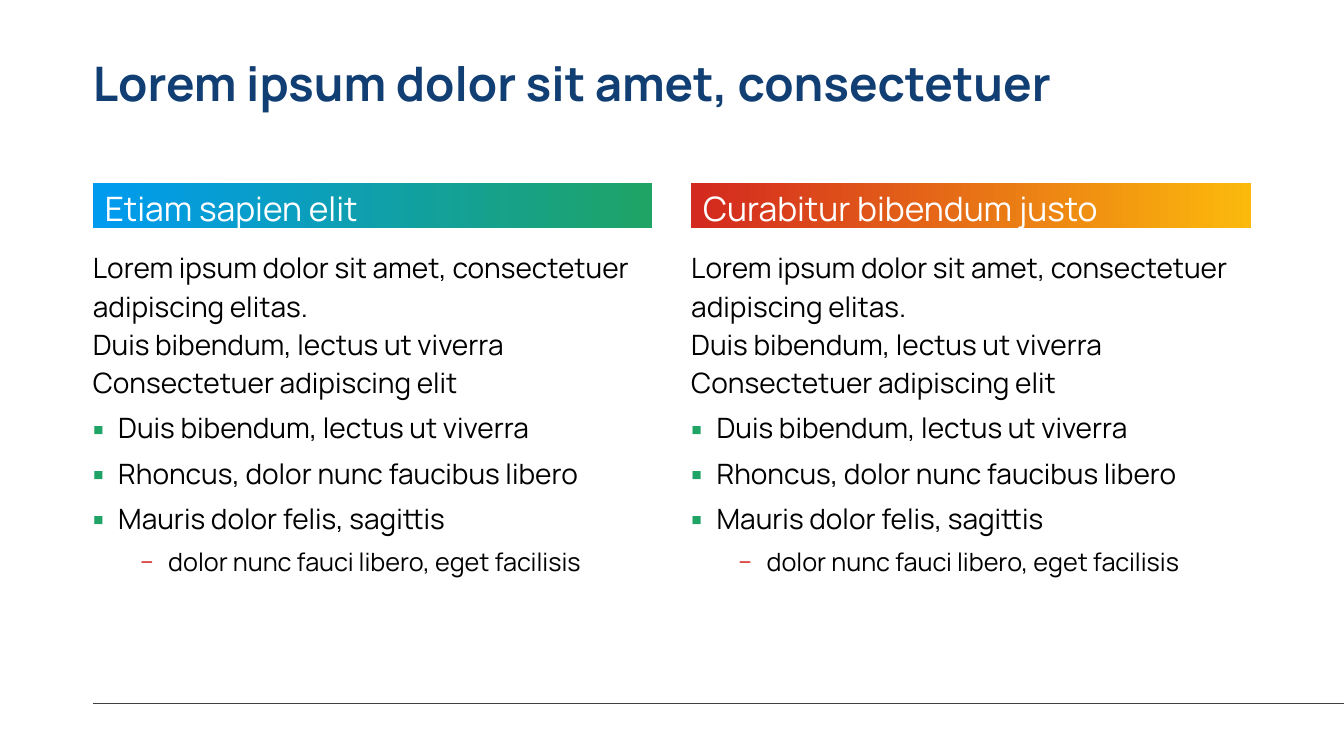
from dataclasses import dataclass

from lxml.etree import SubElement
from pptx import Presentation
from pptx.dml.color import RGBColor
from pptx.enum.shapes import MSO_CONNECTOR
from pptx.enum.text import MSO_ANCHOR, MSO_AUTO_SIZE, PP_ALIGN
from pptx.oxml.ns import qn
from pptx.shapes.base import BaseShape
from pptx.slide import Slide
from pptx.text.text import TextFrame, _Paragraph
from pptx.util import Cm, Pt

FONT = "Manrope"
LEFT = 2.34
COLUMN_WIDTH = 14.1
COLUMN_STEP = 15.08


@dataclass(frozen=True)
class TextStyle:
    size: float
    color: str = "000000"
    bold: bool = False
    line_spacing: float = 1.14
    space_after: float = 0
    level: int = 0
    margin: float = 0
    hanging: float = 0
    bullet: str = ""
    bullet_color: str = ""


@dataclass(frozen=True)
class Column:
    heading: str
    heading_index: int
    body_index: int
    start_position: float
    start_color: str
    end_color: str


TITLE = TextStyle(34, "113E73", bold=True, line_spacing=0.9)
HEADING = TextStyle(24, "FFFFFF")
PLAIN = TextStyle(20, space_after=5)
ITEM = TextStyle(20, space_after=5, margin=0.64, hanging=0.64,
                 bullet="▪", bullet_color="1FA465")
SUBITEM = TextStyle(18, space_after=3, level=1, margin=1.9, hanging=0.71,
                    bullet="–", bullet_color="D3291F")

COLUMNS = [
    Column("Etiam sapien elit", 1, 2, 0.02, "009BEE", "1FA465"),
    Column("Curabitur bibendum justo", 3, 4, 0.01, "D3291F", "FCBA0C"),
]
BODY = [
    ("Lorem ipsum dolor sit amet, consectetuer adipiscing elitas. \n"
     "Duis bibendum, lectus ut viverra Consectetuer adipiscing elit", PLAIN),
    ("Duis bibendum, lectus ut viverra", ITEM),
    ("Rhoncus, dolor nunc faucibus libero", ITEM),
    ("Mauris dolor felis, sagittis", ITEM),
    ("dolor nunc fauci libero, eget facilisis", SUBITEM),
]


def color(value: str) -> RGBColor:
    return RGBColor.from_string(value)


def place(box: BaseShape, left: float, top: float, width: float, height: float) -> None:
    box.left, box.top, box.width, box.height = map(Cm, (left, top, width, height))


def prepare_frame(frame: TextFrame, anchor: MSO_ANCHOR, inset: float = 0) -> None:
    frame.word_wrap = True
    frame.auto_size = MSO_AUTO_SIZE.NONE
    frame.vertical_anchor = anchor
    frame.margin_left = Cm(inset)
    frame.margin_top = frame.margin_right = frame.margin_bottom = 0


def write_paragraph(para: _Paragraph, text: str, style: TextStyle) -> None:
    para.alignment = PP_ALIGN.LEFT
    para.level = style.level
    para.line_spacing = style.line_spacing
    para.space_before = Pt(0)
    para.space_after = Pt(style.space_after)
    properties = para._p.get_or_add_pPr()
    properties.set("marL", str(Cm(style.margin)))
    properties.set("indent", str(-Cm(style.hanging)))
    if style.bullet:
        bullet_color = SubElement(properties, qn("a:buClr"))
        SubElement(bullet_color, qn("a:srgbClr"), val=style.bullet_color)
        SubElement(properties, qn("a:buFont"), typeface=FONT)
        SubElement(properties, qn("a:buChar"), char=style.bullet)
    else:
        SubElement(properties, qn("a:buNone"))
    for number, line in enumerate(text.split("\n")):
        if number:
            para.add_line_break()
        span = para.add_run()
        span.text = line
        span.font.name = FONT
        span.font.size = Pt(style.size)
        span.font.bold = style.bold
        span.font.color.rgb = color(style.color)


def draw_title(page: Slide, text: str) -> None:
    box = page.shapes.title
    place(box, LEFT, 1.52, 29.2, 1.32)
    prepare_frame(box.text_frame, MSO_ANCHOR.TOP)
    write_paragraph(box.text_frame.paragraphs[0], text, TITLE)


def draw_column(page: Slide, column: Column, left: float) -> None:
    boxes = {box.placeholder_format.idx: box for box in page.placeholders}

    heading = boxes[column.heading_index]
    place(heading, left, 4.62, COLUMN_WIDTH, 1.12)
    heading.fill.gradient()
    heading.fill.gradient_angle = 0
    ends = ((column.start_position, column.start_color), (1, column.end_color))
    for stop, (position, value) in zip(heading.fill.gradient_stops, ends):
        stop.position = position
        stop.color.rgb = color(value)
    prepare_frame(heading.text_frame, MSO_ANCHOR.BOTTOM, 0.3)
    write_paragraph(heading.text_frame.paragraphs[0], column.heading, HEADING)

    body = boxes[column.body_index]
    place(body, left, 6.2, COLUMN_WIDTH, 11.02)
    frame = body.text_frame
    prepare_frame(frame, MSO_ANCHOR.TOP)
    for number, (text, style) in enumerate(BODY):
        para = frame.add_paragraph() if number else frame.paragraphs[0]
        write_paragraph(para, text, style)


def draw_footer_line(page: Slide, right: int) -> None:
    line = page.shapes.add_connector(
        MSO_CONNECTOR.STRAIGHT, Cm(LEFT), Cm(17.73), right, Cm(17.73))
    line.line.color.rgb = color("404040")
    line.line.width = Pt(0.5)
    SubElement(line._element.spPr, qn("a:effectLst"))


def main() -> None:
    deck = Presentation()
    deck.slide_width, deck.slide_height = Cm(33.87), Cm(19.05)
    page = deck.slides.add_slide(deck.slide_layouts.get_by_name("Comparison"))
    draw_footer_line(page, deck.slide_width)
    draw_title(page, "Lorem ipsum dolor sit amet, consectetuer")
    for number, column in enumerate(COLUMNS):
        draw_column(page, column, LEFT + number * COLUMN_STEP)
    deck.save("out.pptx")


if __name__ == "__main__":
    main()
